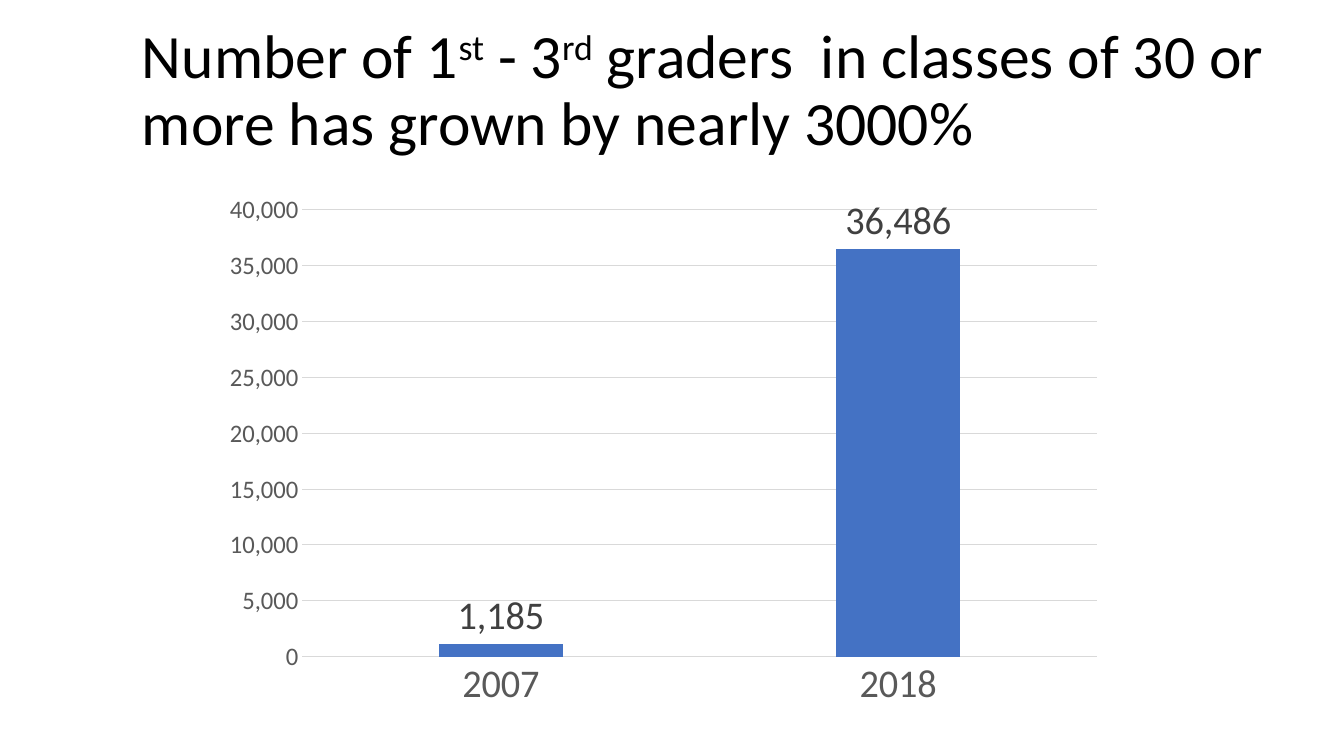
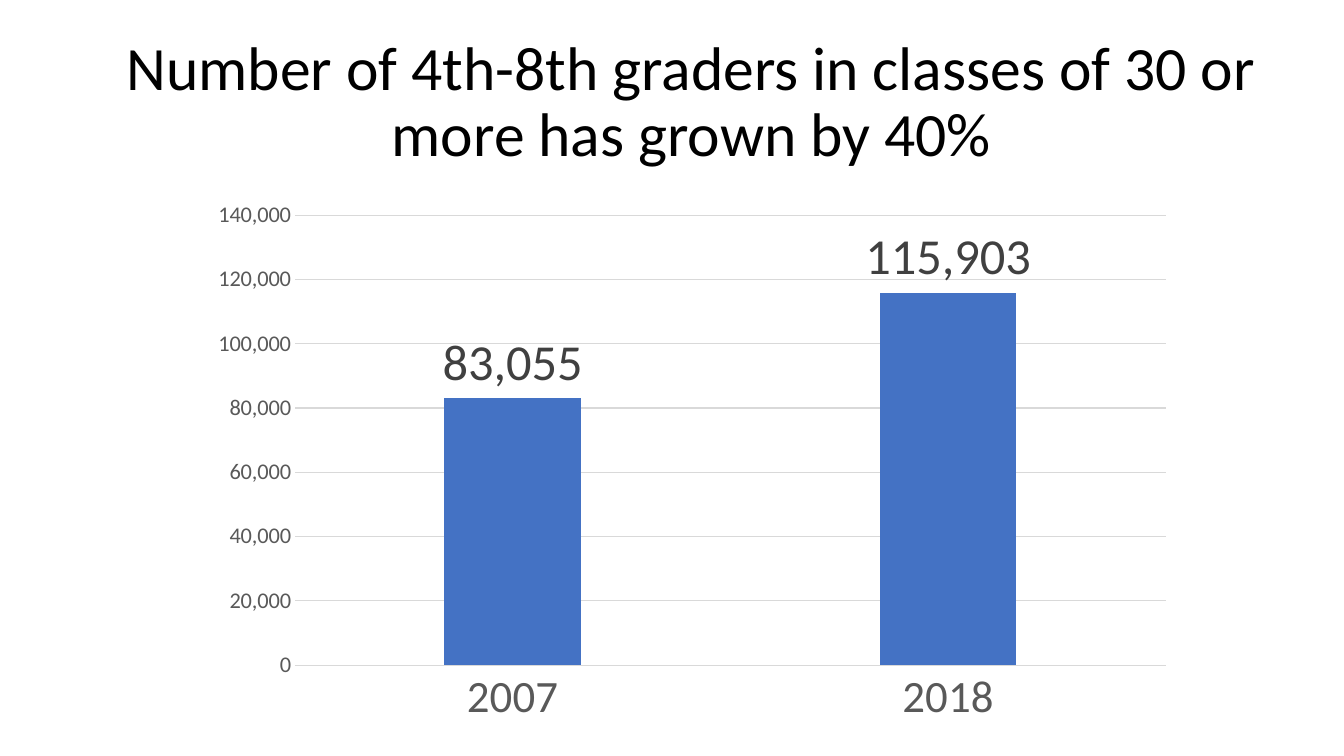
from pptx import Presentation
from pptx.chart.data import CategoryChartData
from pptx.dml.color import RGBColor
from pptx.enum.chart import XL_CHART_TYPE, XL_LABEL_POSITION, XL_TICK_MARK
from pptx.enum.text import MSO_ANCHOR, PP_ALIGN
from pptx.oxml import parse_xml
from pptx.oxml.ns import nsdecls, qn
from pptx.util import Inches, Pt

FONT = "Calibri"
BLACK = RGBColor(0x00, 0x00, 0x00)
BAR_BLUE = RGBColor(0x44, 0x72, 0xC4)
GRID_GREY = RGBColor(0xD9, 0xD9, 0xD9)
AXIS_GREY = RGBColor(0x59, 0x59, 0x59)
LABEL_GREY = RGBColor(0x40, 0x40, 0x40)
YEARS = ("2007", "2018")


def style_font(font, size, color):
    font.name = FONT
    font.size = Pt(size)
    font.color.rgb = color


def style_line(line):
    line.color.rgb = GRID_GREY
    line.width = Pt(0.75)


def add_title(slide, box, pieces, align):
    """Place the title; every second piece is superscript."""
    title = slide.shapes.add_textbox(*map(Inches, box))
    frame = title.text_frame
    frame.word_wrap = True
    frame.vertical_anchor = MSO_ANCHOR.MIDDLE
    paragraph = frame.paragraphs[0]
    paragraph.alignment = align
    paragraph.line_spacing = 0.9
    for index, piece in enumerate(pieces):
        run = paragraph.add_run()
        run.text = piece
        style_font(run.font, 44, BLACK)
        if index % 2:
            run._r.get_or_add_rPr().set("baseline", "30000")


def set_plot_layout(chart, fractions):
    """Fix the inner plot area as x, y, w, h fractions of the chart."""
    plot_area = chart.element.find(".//" + qn("c:plotArea"))
    for layout in plot_area.findall(qn("c:layout")):
        plot_area.remove(layout)
    sizes = "".join(f'<c:{side} val="{value}"/>'
                    for side, value in zip("xywh", fractions))
    plot_area.insert(0, parse_xml(
        f'<c:layout {nsdecls("c")}><c:manualLayout>'
        '<c:layoutTarget val="inner"/><c:xMode val="edge"/><c:yMode val="edge"/>'
        f'{sizes}</c:manualLayout></c:layout>'))


def add_class_chart(slide, box, counts, maximum, step,
                    year_size, scale_size, label_size, plot_layout=None):
    data = CategoryChartData(number_format="#,##0")
    data.categories = YEARS
    data.add_series("Series 1", counts)
    chart = slide.shapes.add_chart(
        XL_CHART_TYPE.COLUMN_CLUSTERED, *map(Inches, box), data).chart
    style_font(chart.font, 10, BLACK)
    chart.has_legend = False
    chart.has_title = False
    if plot_layout:
        set_plot_layout(chart, plot_layout)

    # Axes
    years, scale = chart.category_axis, chart.value_axis
    for axis, size in ((years, year_size), (scale, scale_size)):
        axis.major_tick_mark = axis.minor_tick_mark = XL_TICK_MARK.NONE
        style_font(axis.tick_labels.font, size, AXIS_GREY)
    style_line(years.format.line)
    scale.format.line.fill.background()
    style_line(scale.major_gridlines.format.line)
    scale.minimum_scale, scale.maximum_scale, scale.major_unit = 0, maximum, step
    scale.tick_labels.number_format = "#,##0"
    scale.tick_labels.number_format_is_linked = False

    # Columns and their labels
    plot = chart.plots[0]
    plot.vary_by_categories = False
    plot.gap_width, plot.overlap = 219, -27
    columns = plot.series[0]
    columns.format.fill.solid()
    columns.format.fill.fore_color.rgb = BAR_BLUE
    labels = columns.data_labels
    labels.show_value = True
    labels.position = XL_LABEL_POSITION.OUTSIDE_END
    style_font(labels.font, label_size, LABEL_GREY)


def build_early_grades(slide):
    add_title(slide, (1.31, 0.19, 11.5, 1.45),
              ("Number of 1", "st", " - 3", "rd",
               " graders  in classes of 30 or more has grown by nearly 3000%"),
              PP_ALIGN.LEFT)
    add_class_chart(slide, (2.28, 1.64, 8.77, 5.48), (1185, 36486), 40000, 5000,
                    year_size=28, scale_size=18, label_size=28,
                    plot_layout=(0.06, 0.08, 0.92, 0.81))


def build_middle_grades(slide):
    add_title(slide, (1.11, 0.3, 11.5, 1.45),
              ("Number of 4th-8th graders in classes of 30 or more has grown by 40%",),
              PP_ALIGN.CENTER)
    add_class_chart(slide, (1.97, 1.89, 9.79, 5.41), (83055, 115903), 140000, 20000,
                    year_size=32, scale_size=16, label_size=36)


def main():
    deck = Presentation()
    deck.slide_width, deck.slide_height = Inches(13.33), Inches(7.5)
    blank = deck.slide_layouts[6]
    for build in (build_early_grades, build_middle_grades):
        build(deck.slides.add_slide(blank))
    deck.save("out.pptx")


if __name__ == "__main__":
    main()
